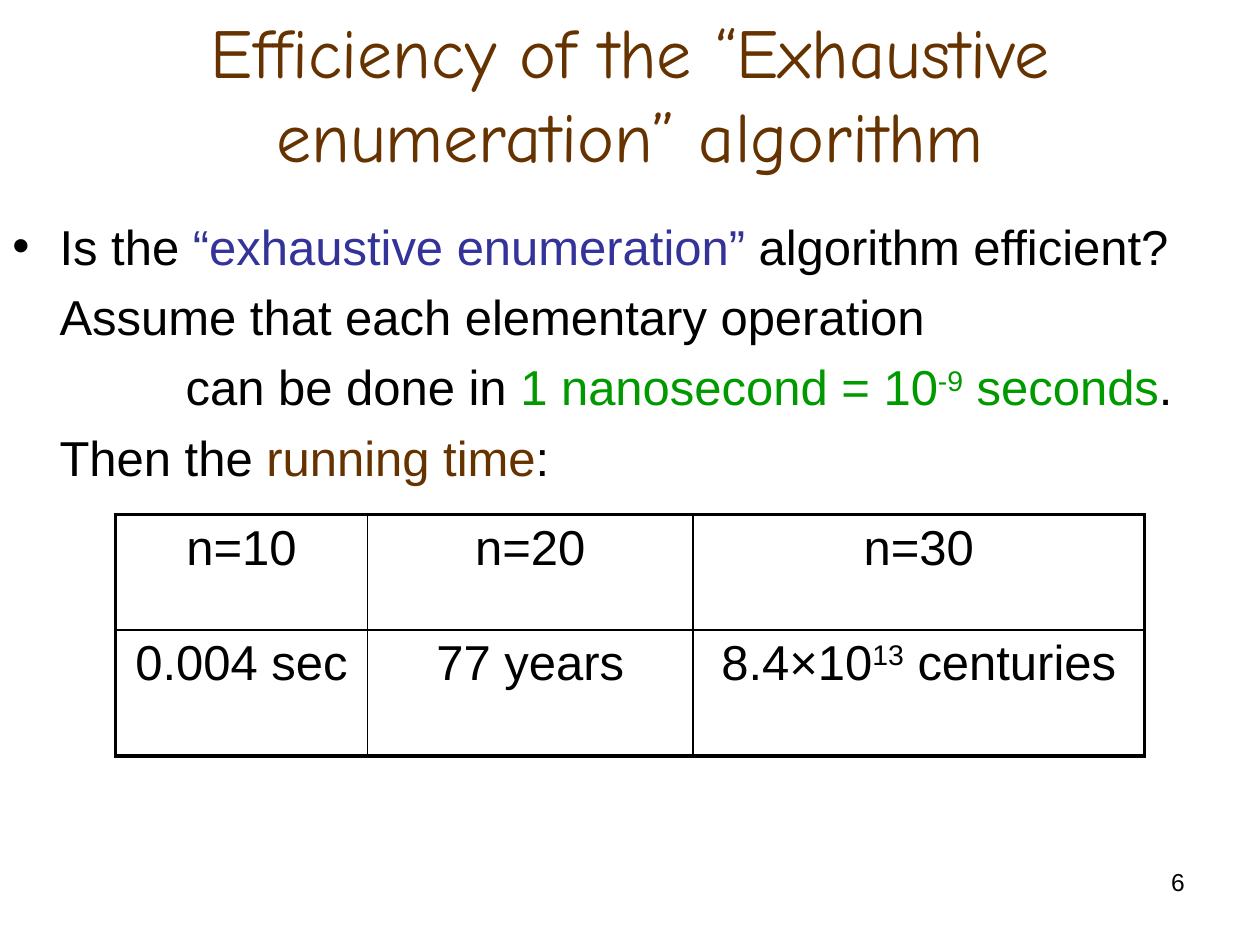
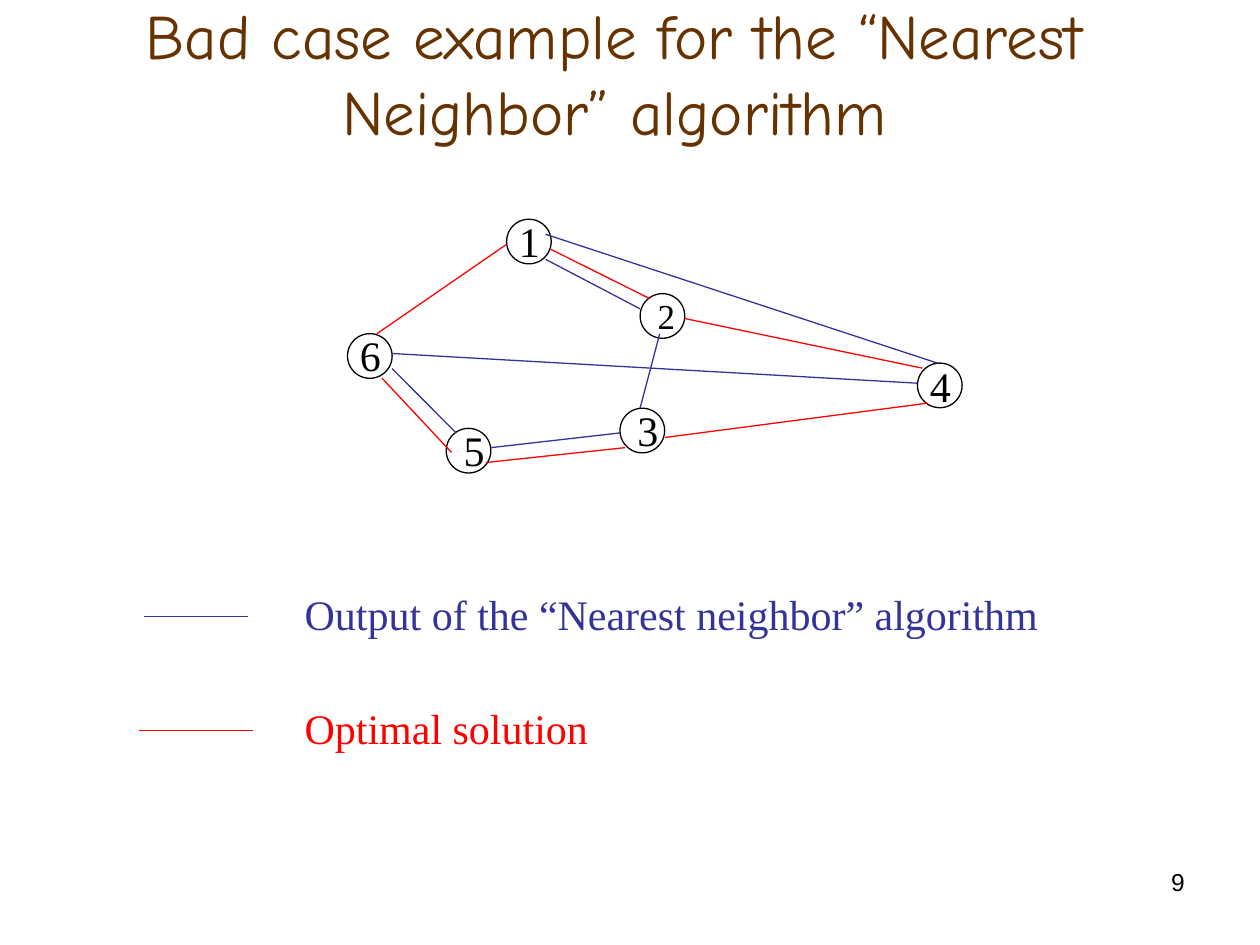
from pptx import Presentation
from pptx.dml.color import RGBColor as Rgb
from pptx.enum.shapes import MSO_CONNECTOR as Link, MSO_SHAPE as Form
from pptx.enum.text import MSO_ANCHOR as Anchor, PP_ALIGN as Align
from pptx.oxml.ns import qn
from pptx.util import Pt
from lxml.etree import SubElement as Sub

HUES = {"black": "000000", "brown": "663300", "blue": "333399",
        "green": "009900", "red": "FF0000"}
SANS, SERIF, HAND = "Arial", "Times New Roman", "Comic Neue"

TIMES = [
    [[("n=10",)], [("n=20",)], [("n=30",)]],
    [[("0.004 sec",)], [("77 years",)],
     [("8.4×10",), ("13", "black", True), (" centuries",)]],
]

NODES = [
    ("1", 289.5, 125.3, 0, -5.75, 24),
    ("2", 365.8, 167.8, 2.9, -2.9, 20),
    ("3", 354.3, 233.3, 2.9, -5.75, 24),
    ("4", 524.3, 207.5, 0, -5.2, 24),
    ("5", 255, 244.8, 2.9, -5.75, 24),
    ("6", 198.6, 190.7, 0, -5.75, 24),
]

PATHS = {
    "blue": [
        (311.8, 148.2, 365.8, 176.5), (377, 190.7, 365.8, 233.2),
        (354.3, 247.4, 280.6, 255.8), (260.7, 247.4, 224, 210.6),
        (224, 202, 524.3, 219), (535.7, 207.5, 311.8, 133.9),
    ],
    "red": [
        (314.6, 142.4, 371.4, 170.7), (391.2, 182, 527.1, 210.4),
        (529.9, 230.4, 380, 250), (357.2, 255.8, 277.8, 264.3),
        (258, 258.5, 218.3, 216.1), (215.4, 190.7, 289.4, 139.7),
    ],
}

LEGEND = [
    ("Output of the “Nearest neighbor” algorithm", "blue", 82.3, 141.6, 352.2),
    ("Optimal solution", "red", 79.4, 144.5, 417.3),
]


def tint(hue):
    return Rgb.from_string(HUES[hue])


def add_run(para, text, size, face, hue="black", sup=False):
    run = para.add_run()
    run.text = text
    font = run.font
    font.size, font.name, font.bold = Pt(size), face, False
    font.color.rgb = tint(hue)
    if sup:
        font._element.set("baseline", "30000")


def add_box(slide, x, y, w, h, anchor=Anchor.TOP):
    frame = slide.shapes.add_textbox(Pt(x), Pt(y), Pt(w), Pt(h)).text_frame
    frame.word_wrap = True
    frame.vertical_anchor = anchor
    return frame


def add_text(slide, text, area, size, face, hue="black", align=Align.LEFT,
             anchor=Anchor.TOP, gap=0):
    para = add_box(slide, *area, anchor).paragraphs[0]
    para.alignment = align
    para.space_before = Pt(gap)
    add_run(para, text, size, face, hue)


def add_title(slide, text, area, size):
    add_text(slide, text, area, size, HAND, "brown", Align.CENTER, Anchor.MIDDLE)


def add_page(slide, number):
    add_text(slide, number, (516, 492, 168, 37.5), 14, SANS, align=Align.RIGHT)


def add_line(slide, hue, x1, y1, x2, y2):
    line = slide.shapes.add_connector(
        Link.STRAIGHT, Pt(x1), Pt(y1), Pt(x2), Pt(y2))
    line.line.color.rgb = tint(hue)
    line.line.width = Pt(0.75)
    Sub(line._element.spPr, qn("a:effectLst"))


def add_node(slide, name, x, y, dx, dy, size):
    ring = slide.shapes.add_shape(Form.OVAL, Pt(x), Pt(y), Pt(25.5), Pt(25.5))
    ring.shadow.inherit = False
    ring.fill.background()
    ring.line.color.rgb = tint("black")
    ring.line.width = Pt(0.75)
    add_text(slide, name, (x + dx, y + dy, 22, 36), size, SERIF, gap=2.5)


def add_point(frame, runs, first, left=27, hang=0):
    para = frame.paragraphs[0] if first else frame.add_paragraph()
    para.space_before = Pt(2.9 if first else 6.6)
    props = para._element.get_or_add_pPr()
    props.set("marL", str(Pt(left)))
    props.set("indent", str(Pt(-hang)))
    if hang:
        Sub(props, qn("a:buFont"), typeface=SANS)
        Sub(props, qn("a:buChar"), char="•")
    else:
        Sub(props, qn("a:buNone"))
    for run in runs:
        add_run(para, run[0], 28, SANS, *run[1:])


def add_edge(cell, side, width):
    edge = Sub(cell._tc.get_or_add_tcPr(), qn("a:ln" + side), w=str(Pt(width)))
    Sub(Sub(edge, qn("a:solidFill")), qn("a:srgbClr"), val=HUES["black"])


def add_grid(slide, rows, x, y, wides, highs):
    grid = slide.shapes.add_table(
        len(highs), len(wides), Pt(x), Pt(y), Pt(sum(wides)), Pt(sum(highs))).table
    grid.first_row = grid.horz_banding = False
    for col, wide in zip(grid.columns, wides):
        col.width = Pt(wide)
    for r, row in enumerate(rows):
        grid.rows[r].height = Pt(highs[r])
        for c, runs in enumerate(row):
            cell = grid.cell(r, c)
            outer = {"L": c == 0, "R": c == len(wides) - 1,
                     "T": r == 0, "B": r == len(highs) - 1}
            for side, rim in outer.items():
                add_edge(cell, side, 2.25 if rim else 1)
            cell.fill.background()
            para = cell.text_frame.paragraphs[0]
            para.alignment = Align.CENTER
            for run in runs:
                add_run(para, run[0], 28, SANS, *run[1:])


def make_cost(slide):
    add_page(slide, "6")
    add_title(slide, "Efficiency of the “Exhaustive enumeration” algorithm",
              (0, 21.6, 720, 62.6), 40)
    body = add_box(slide, 0, 120, 720, 362)
    add_point(body, [("Is the ",), ("“exhaustive enumeration”", "blue"),
                     (" algorithm efficient?",)], True, hang=27)
    add_point(body, [("Assume that each elementary operation",)], False)
    add_point(body, [("can be done in ",), ("1 nanosecond = 10", "green"),
                     ("-9", "green", True), (" seconds", "green"), (".",)],
              False, left=99)
    add_point(body, [("Then the ",), ("running time", "brown"), (":",)], False)
    add_grid(slide, TIMES, 66, 294, (144, 186, 258), (66, 72))


def make_tour(slide):
    add_page(slide, "9")
    add_title(slide, "Bad case example for the “Nearest Neighbor” algorithm",
              (0, 0, 702, 83), 36)
    for node in NODES:
        add_node(slide, *node)
    for hue, lines in PATHS.items():
        for ends in lines:
            add_line(slide, hue, *ends)
    for text, hue, x1, x2, y in LEGEND:
        add_line(slide, hue, x1, y, x2, y)
        add_text(slide, text, (167, y - 19.6, 460, 36), 24, SERIF, hue, gap=2.5)


def main():
    deck = Presentation()
    deck.slide_width, deck.slide_height = Pt(720), Pt(540)
    for make in (make_cost, make_tour):
        make(deck.slides.add_slide(deck.slide_layouts[6]))
    deck.save("out.pptx")


if __name__ == "__main__":
    main()
